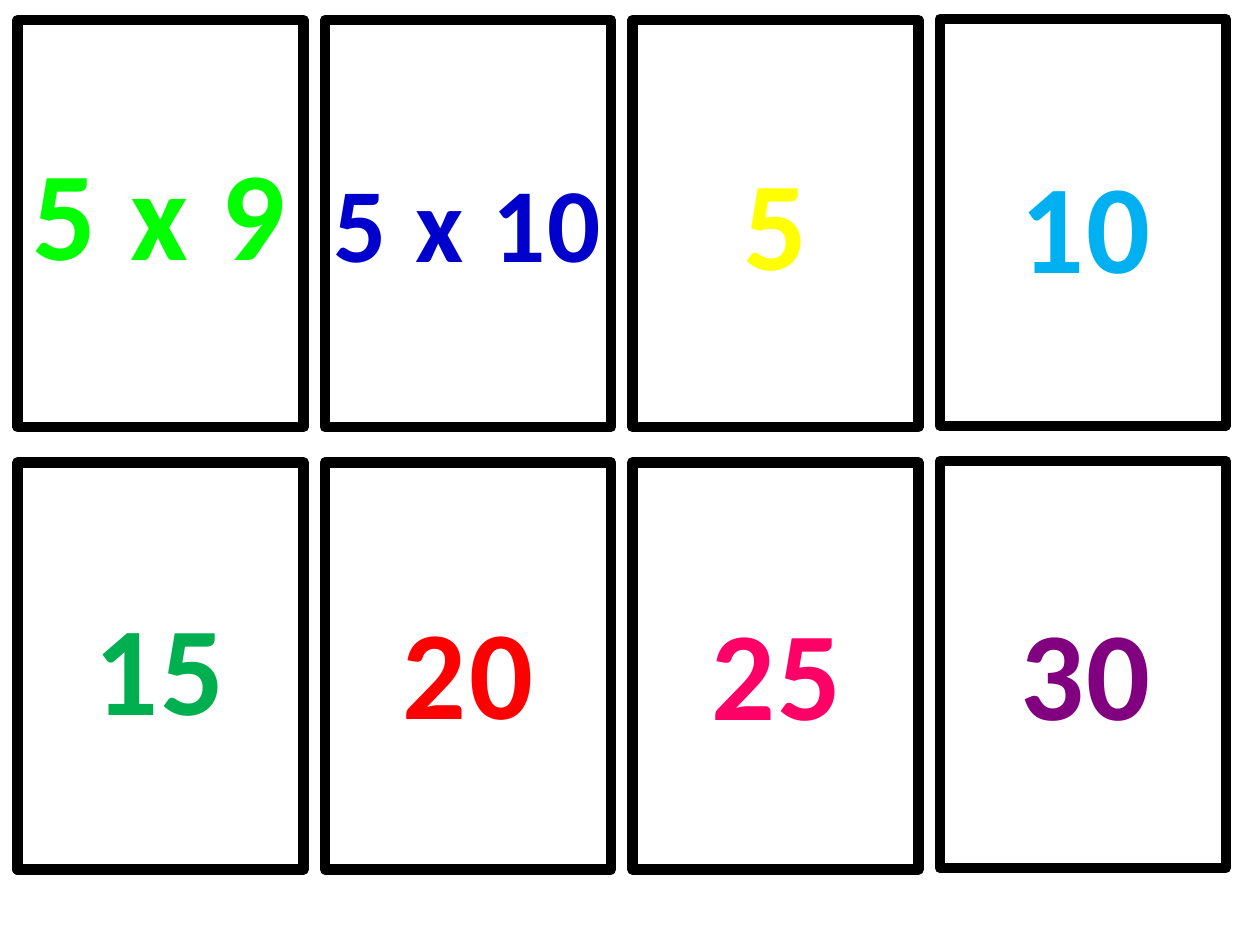
from dataclasses import dataclass

from pptx import Presentation
from pptx.dml.color import RGBColor
from pptx.enum.shapes import MSO_SHAPE
from pptx.enum.text import MSO_AUTO_SIZE, PP_ALIGN
from pptx.slide import Slide
from pptx.util import Emu, Pt

RECTANGLE = MSO_SHAPE.RECTANGLE
FIT_SHAPE = MSO_AUTO_SIZE.SHAPE_TO_FIT_TEXT
CENTER = PP_ALIGN.CENTER

EMU_PER_PX = 9144  # 100 px to the inch
BLANK_LAYOUT = 6
COLUMNS = 4
CARD_LEFT, CARD_TOP = 14, 16
CARD_WIDTH, CARD_HEIGHT = 227, 323
COLUMN_STEP, ROW_STEP = 244, 351
LAST_COLUMN_RISE = 1


@dataclass(frozen=True)
class Theme:
    font: str = "Calibri"
    large: int = 72
    small: int = 60
    spacing: int = 150  # hundredths of a point
    border_width: int = 6
    border: str = "000000"
    paper: str = "FFFFFF"


@dataclass(frozen=True)
class Card:
    text: str
    color: str
    left: int
    top: int
    width: int
    height: int = 131
    size: int = Theme.large


THEME = Theme()

# Cards in reading order; the box of each label is placed on its own.
CARDS = [
    Card("5 x 9", "00FF00", 14, 102, 225),
    Card("5 x 10", "0000CC", 252, 120, 238, height=111, size=THEME.small),
    Card("5", "FFFF00", 579, 110, 73),
    Card("10", "00B0F0", 798, 112, 127),
    Card("15", "00B050", 63, 463, 127),
    Card("20", "FF0000", 308, 466, 127),
    Card("25", "FF0066", 553, 467, 127),
    Card("30", "800080", 798, 467, 127),
]


def px(length: int) -> Emu:
    return Emu(length * EMU_PER_PX)


def rgb(color: str) -> RGBColor:
    return RGBColor.from_string(color)


def add_frame(slide: Slide, index: int) -> None:
    row, column = divmod(index, COLUMNS)
    rise = LAST_COLUMN_RISE if column == COLUMNS - 1 else 0
    frame = slide.shapes.add_shape(
        RECTANGLE,
        px(CARD_LEFT + column * COLUMN_STEP),
        px(CARD_TOP + row * ROW_STEP - rise),
        px(CARD_WIDTH),
        px(CARD_HEIGHT),
    )
    frame.shadow.inherit = False
    frame.fill.solid()
    frame.fill.fore_color.rgb = rgb(THEME.paper)
    frame.line.color.rgb = rgb(THEME.border)
    frame.line.width = Pt(THEME.border_width)


def add_text(slide: Slide, text: str, *, left: int, top: int, width: int,
             height: int, size: int, color: str) -> None:
    box = slide.shapes.add_textbox(px(left), px(top), px(width), px(height))
    box.text_frame.word_wrap = False
    box.text_frame.auto_size = FIT_SHAPE
    paragraph = box.text_frame.paragraphs[0]
    paragraph.alignment = CENTER
    run = paragraph.add_run()
    run.text = text
    run.font.name = THEME.font
    run.font.size = Pt(size)
    run.font.bold = True
    run.font.color.rgb = rgb(color)
    run._r.get_or_add_rPr().set("spc", str(THEME.spacing))


def main() -> None:
    presentation = Presentation()
    presentation.slide_width, presentation.slide_height = px(1000), px(750)
    slide = presentation.slides.add_slide(presentation.slide_layouts[BLANK_LAYOUT])
    for index in range(len(CARDS)):
        add_frame(slide, index)
    for card in CARDS:
        add_text(slide, card.text, left=card.left, top=card.top, width=card.width,
                 height=card.height, size=card.size, color=card.color)
    presentation.save("out.pptx")


if __name__ == "__main__":
    main()
